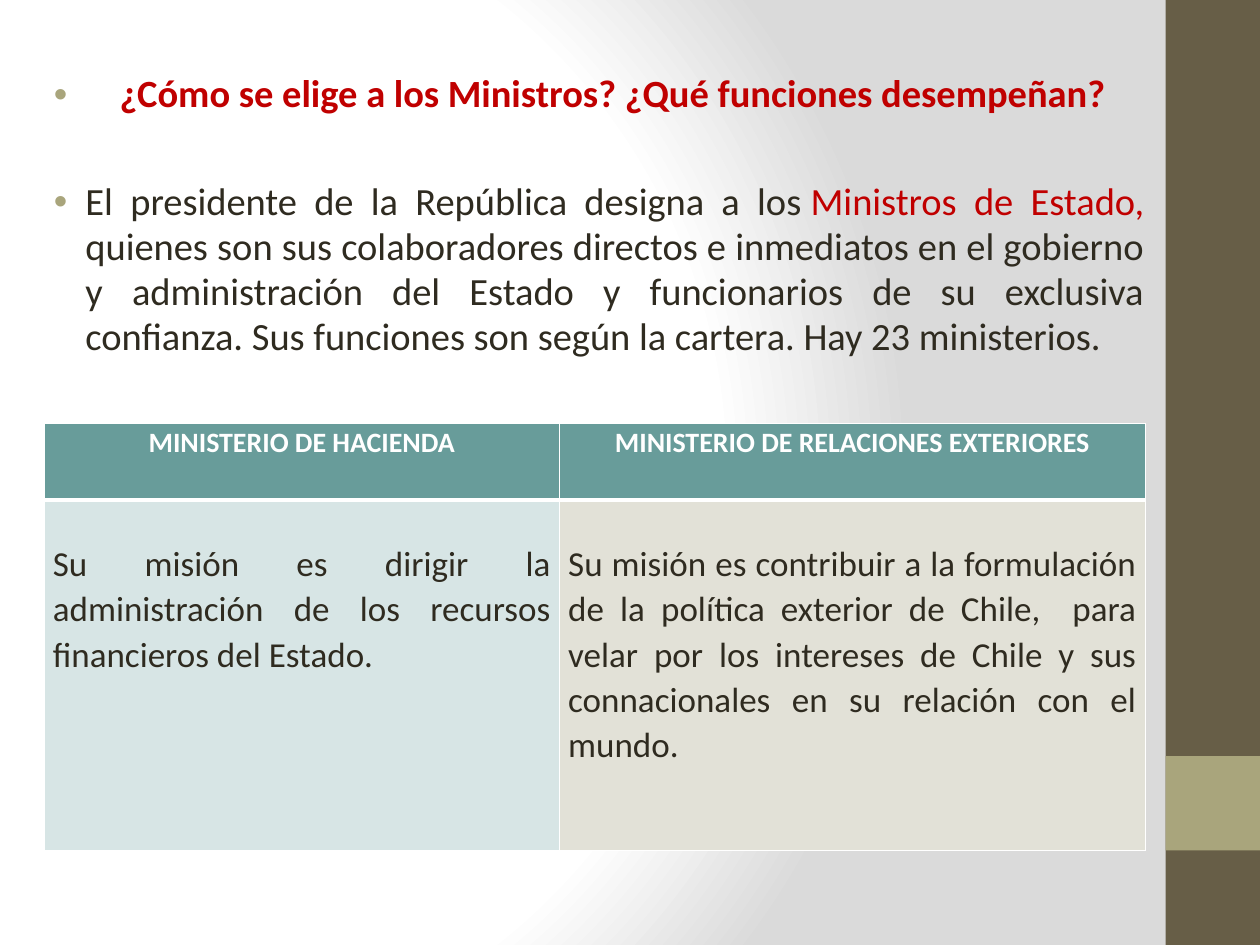
"""Build a slide on how Chilean ministers are chosen, with a table of two ministries."""
import lxml.etree
import pptx
import pptx.dml.color
import pptx.enum.shapes
import pptx.enum.text
import pptx.oxml
import pptx.oxml.ns
import pptx.util
from dataclasses import dataclass

Inches = pptx.util.Inches
Pt = pptx.util.Pt
ALIGN = pptx.enum.text.PP_ALIGN
qn = pptx.oxml.ns.qn


@dataclass(frozen=True)
class Theme:
    font: str = "Calibri"
    ink: str = "2F2B20"
    accent: str = "C00000"
    white: str = "FFFFFF"
    shade: str = "DADADA"
    bar: str = "675E47"
    olive: str = "A9A57C"
    header: str = "689C9A"
    columns: tuple = ("D7E5E5", "E2E1D7")
    body_size: int = 22
    header_size: int = 16
    cell_size: int = 20


THEME = Theme()

SIDEBAR = [(0, 7.5, THEME.bar), (6, 0.75, THEME.olive)]
TITLE = [("¿Cómo se elige a los Ministros? ¿Qué funciones desempeñan?", THEME.accent)]
ANSWER = [
    ("El presidente de la República designa a los\u00a0", THEME.ink),
    ("Ministros de Estado, ", THEME.accent),
    ("quienes son sus colaboradores directos e inmediatos en el gobierno y "
     "administración del Estado y funcionarios de su exclusiva confianza. "
     "Sus funciones son según la cartera. Hay 23 ministerios.", THEME.ink),
]
MINISTRIES = [
    ("MINISTERIO DE HACIENDA",
     "Su misión es dirigir la administración de los recursos financieros del Estado."),
    ("MINISTERIO DE RELACIONES EXTERIORES",
     "Su misión es contribuir a la formulación de la política exterior de Chile,  "
     "para velar por los intereses de Chile y sus connacionales en su relación con el mundo."),
]
COLUMN_WIDTHS = (4.09, 4.65)
ROW_HEIGHTS = (0.61, 2.78)


def rgb(value):
    return pptx.dml.color.RGBColor.from_string(value)


def add_element(parent, tag, **attributes):
    element = lxml.etree.SubElement(parent, qn(tag))
    for name, value in attributes.items():
        element.set(name, str(value))
    return element


def paint_background(slide):
    fill = slide.background.fill
    fill.gradient()
    gradient = slide.background._cSld.find(".//" + qn("a:gradFill"))
    for child in list(gradient):
        gradient.remove(child)
    stops = add_element(gradient, "a:gsLst")
    for position, color in ((0, THEME.white), (75, THEME.white), (100, THEME.shade)):
        stop = add_element(stops, "a:gs", pos=position * 1000)
        add_element(stop, "a:srgbClr", val=color)
    circle = add_element(gradient, "a:path")
    circle.set("path", "circle")
    add_element(circle, "a:fillToRect", l=20000, t=50000, r=100000, b=50000)


def add_sidebar(slide):
    for top, height, color in SIDEBAR:
        shape = slide.shapes.add_shape(
            pptx.enum.shapes.MSO_SHAPE.RECTANGLE,
            Inches(9.25), Inches(top), Inches(0.75), Inches(height))
        shape.shadow.inherit = False
        shape.fill.solid()
        shape.fill.fore_color.rgb = rgb(color)
        shape.line.fill.background()


def format_bullet(paragraph, margin, runs):
    properties = paragraph._p.get_or_add_pPr()
    properties.set("marL", str(Inches(margin)))
    properties.set("indent", str(Inches(0.13 - margin)))
    paragraph.line_spacing = 0.98
    paragraph.space_before = Pt(4.4)
    color = add_element(properties, "a:buClr")
    add_element(color, "a:srgbClr", val=THEME.olive)
    add_element(properties, "a:buFont", typeface="Arial")
    add_element(properties, "a:buChar", char="•")
    paragraph.font.name = THEME.font
    paragraph.font.size = Pt(THEME.body_size)
    for text, run_color in runs:
        run = paragraph.add_run()
        run.text = text
        run.font.color.rgb = rgb(run_color)


def add_body(slide):
    box = slide.shapes.add_textbox(Inches(0.2), Inches(0.52), Inches(8.98), Inches(2.44))
    frame = box.text_frame
    frame.word_wrap = True
    title = frame.paragraphs[0]
    title.space_after = Pt(31)
    format_bullet(title, 0.65, TITLE)
    title.font.bold = True
    answer = frame.add_paragraph()
    answer.alignment = ALIGN.JUSTIFY
    format_bullet(answer, 0.38, ANSWER)


def add_borders(cell, bottom, top):
    properties = cell._tc.get_or_add_tcPr()
    widths = {"a:lnL": 1, "a:lnR": 1, "a:lnT": top, "a:lnB": bottom}
    for index, (tag, width) in enumerate(widths.items()):
        line = lxml.etree.Element(qn(tag), w=str(Pt(width)))
        fill = add_element(line, "a:solidFill")
        add_element(fill, "a:srgbClr", val=THEME.white)
        properties.insert(index, line)


def fill_cell(cell, text, fill, color, size, is_header):
    cell.margin_left = cell.margin_right = Inches(0.07)
    cell.margin_top = Inches(0 if is_header else 0.32)
    cell.margin_bottom = 0
    cell.fill.solid()
    cell.fill.fore_color.rgb = rgb(fill)
    add_borders(cell, bottom=3 if is_header else 1, top=1 if is_header else 3)
    cell.text = text
    paragraph = cell.text_frame.paragraphs[0]
    paragraph.alignment = ALIGN.CENTER if is_header else ALIGN.JUSTIFY
    paragraph.line_spacing = 1.06
    paragraph.font.name = THEME.font
    paragraph.font.size = Pt(size)
    paragraph.font.bold = is_header
    paragraph.font.color.rgb = rgb(color)


def add_ministries(slide):
    table = slide.shapes.add_table(
        len(ROW_HEIGHTS), len(COLUMN_WIDTHS), Inches(0.35), Inches(3.36),
        Inches(sum(COLUMN_WIDTHS)), Inches(sum(ROW_HEIGHTS))).table
    for row, height in zip(table.rows, ROW_HEIGHTS):
        row.height = Inches(height)
    for index, (name, mission) in enumerate(MINISTRIES):
        table.columns[index].width = Inches(COLUMN_WIDTHS[index])
        fill_cell(table.cell(0, index), name, THEME.header, THEME.white,
                  THEME.header_size, True)
        fill_cell(table.cell(1, index), mission, THEME.columns[index], THEME.ink,
                  THEME.cell_size, False)


def main():
    presentation = pptx.Presentation()
    presentation.slide_width = Inches(10)
    presentation.slide_height = Inches(7.5)
    slide = presentation.slides.add_slide(presentation.slide_layouts[6])
    paint_background(slide)
    add_sidebar(slide)
    add_body(slide)
    add_ministries(slide)
    presentation.save("out.pptx")


if __name__ == "__main__":
    main()
